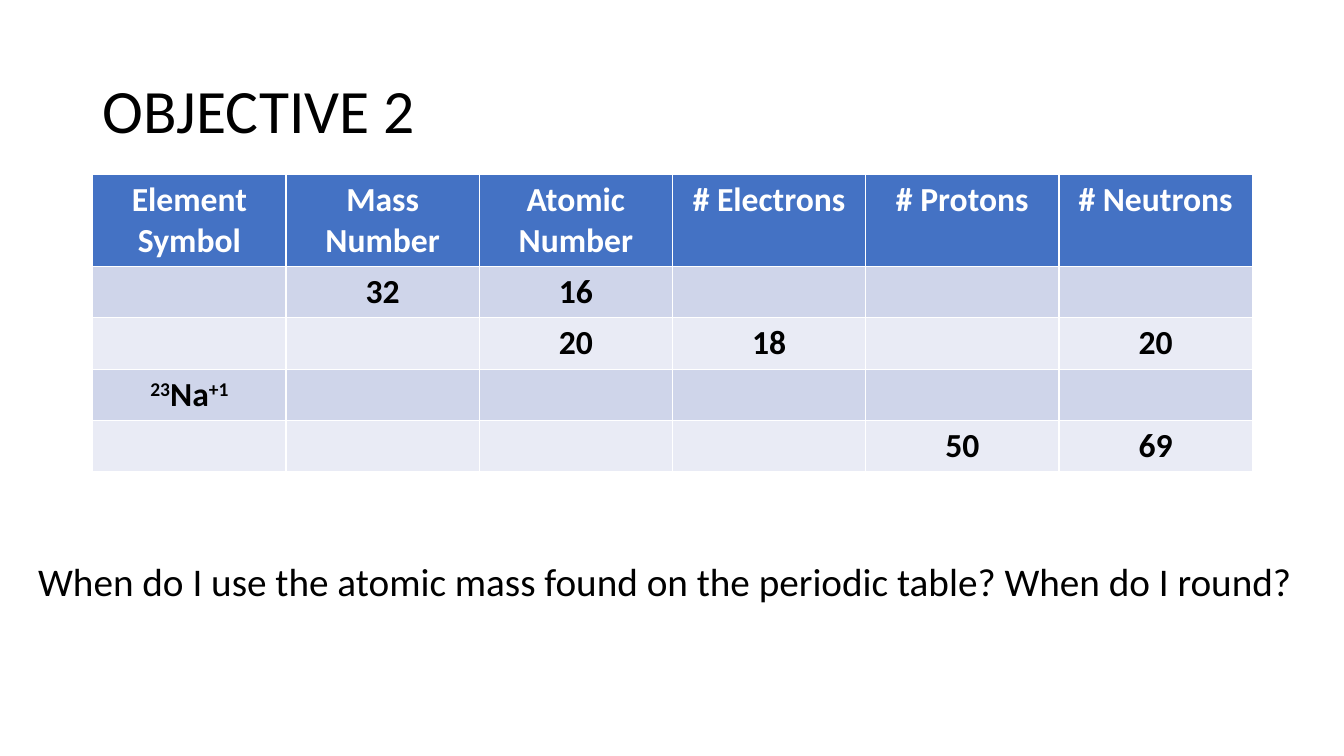
"""Build the Objective 2 slide: an atomic-structure table and a question."""
import pptx
import pptx.util
import pptx.dml.color
import pptx.enum.text

Inches = pptx.util.Inches
ANCHOR = pptx.enum.text.MSO_ANCHOR
CENTER = pptx.enum.text.PP_ALIGN.CENTER

TEXTS = [
    {"text": "OBJECTIVE 2", "box": (0.92, 0.4, 11.5, 1.45), "size": 44,
     "anchor": ANCHOR.MIDDLE, "spacing": 0.9},
    {"text": "When do I use the atomic mass found on the periodic table? When do I round?",
     "box": (0.28, 5.48, 12.78, 0.57), "size": 28, "anchor": ANCHOR.TOP, "spacing": 1.0},
]
ION = [("23", True), ("Na", False), ("+1", True)]
ROWS = [
    ["Element Symbol", "Mass Number", "Atomic Number", "# Electrons", "# Protons", "# Neutrons"],
    ["", "32", "16", "", "", ""],
    ["", "", "20", "18", "", "20"],
    [ION, "", "", "", "", ""],
    ["", "", "", "", "50", "69"],
]
TABLE_LEFT, TABLE_TOP, TABLE_WIDTH = 0.92, 1.73, 11.5
HEADER_HEIGHT, ROW_HEIGHT = 0.91, 0.51
HEADER_FILL, BANDS = "4472C4", ("E9EBF5", "CFD5EA")


def color(value):
    return pptx.dml.color.RGBColor.from_string(value)


def add_run(p, text, size, ink, bold=False, raised=False):
    r = p.add_run()
    r.text = text
    fmt = {"name": "Calibri", "size": pptx.util.Pt(size), "bold": bold}
    for key, value in fmt.items():
        setattr(r.font, key, value)
    r.font.color.rgb = color(ink)
    if raised:
        r._r.get_or_add_rPr().set("baseline", "30000")


def add_text(slide, item):
    sp = slide.shapes.add_textbox(*map(Inches, item["box"]))
    tf = sp.text_frame
    for key, value in {"word_wrap": True, "vertical_anchor": item["anchor"]}.items():
        setattr(tf, key, value)
    p = tf.paragraphs[0]
    p.line_spacing = item["spacing"]
    add_run(p, item["text"], item["size"], "000000")


def add_atoms_table(slide):
    heights = [HEADER_HEIGHT] + [ROW_HEIGHT] * (len(ROWS) - 1)
    box = (TABLE_LEFT, TABLE_TOP, TABLE_WIDTH, sum(heights))
    table = slide.shapes.add_table(len(ROWS), len(ROWS[0]), *map(Inches, box)).table
    for i, values in enumerate(ROWS):
        table.rows[i].height = Inches(heights[i])
        for j, value in enumerate(values):
            cell = table.cell(i, j)
            cell.fill.solid()
            cell.fill.fore_color.rgb = color(BANDS[i % 2] if i else HEADER_FILL)
            p = cell.text_frame.paragraphs[0]
            p.alignment = CENTER
            runs = [(value, False)] if isinstance(value, str) else value
            for text, raised in runs:
                if text:
                    add_run(p, text, 24, "000000" if i else "FFFFFF", True, raised)


def main():
    prs = pptx.Presentation()
    prs.slide_width, prs.slide_height = Inches(13.33), Inches(7.5)
    slide = prs.slides.add_slide(prs.slide_layouts[6])
    add_atoms_table(slide)
    for item in TEXTS:
        add_text(slide, item)
    prs.save("out.pptx")


if __name__ == "__main__":
    main()
